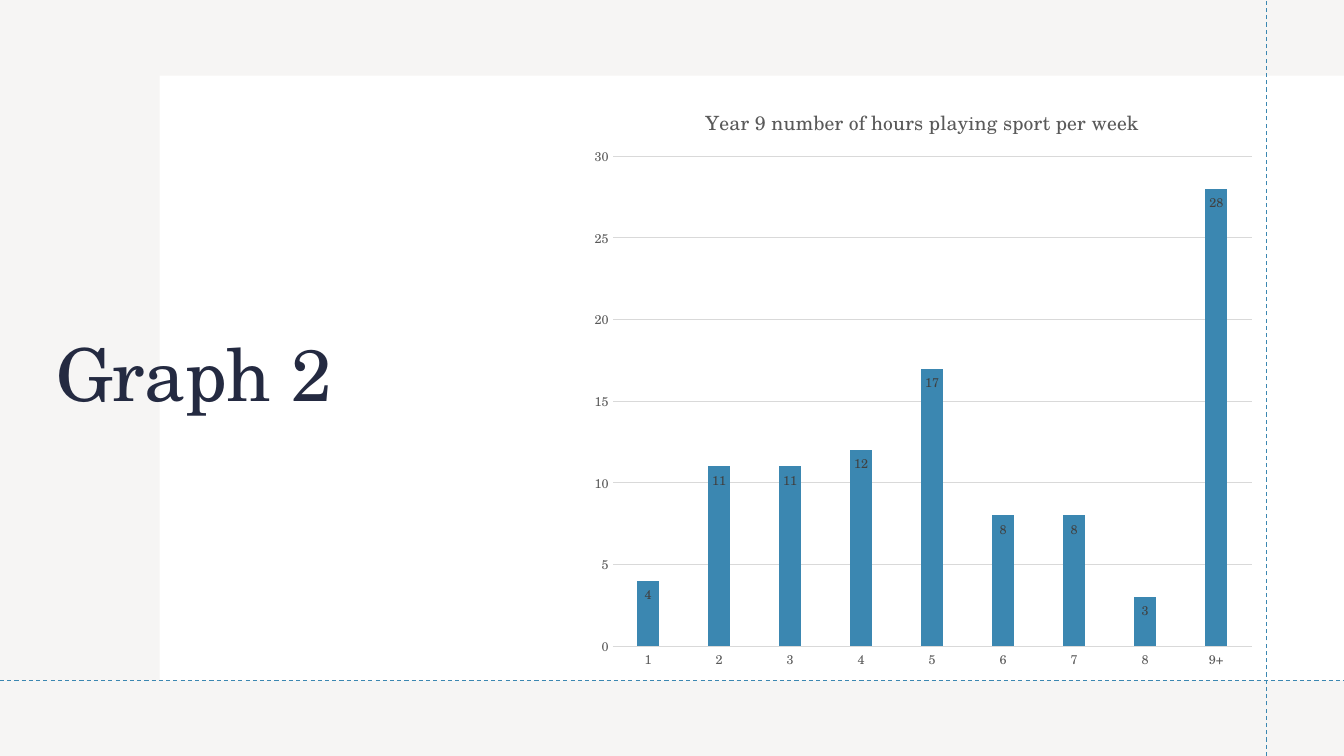
"""Build a slide with a column chart of weekly sport hours."""
from dataclasses import dataclass

from lxml import etree
from pptx import Presentation
from pptx.chart.data import CategoryChartData
from pptx.dml.color import RGBColor
from pptx.enum.chart import XL_CHART_TYPE, XL_LABEL_POSITION, XL_TICK_MARK
from pptx.enum.dml import MSO_LINE
from pptx.enum.shapes import MSO_CONNECTOR, MSO_SHAPE
from pptx.enum.text import MSO_ANCHOR, PP_ALIGN
from pptx.oxml import parse_xml
from pptx.oxml.ns import nsdecls, qn
from pptx.util import Pt

COLUMN = XL_CHART_TYPE.COLUMN_CLUSTERED
INSIDE_END = XL_LABEL_POSITION.INSIDE_END
NO_TICK = XL_TICK_MARK.NONE
DASH = MSO_LINE.DASH
STRAIGHT = MSO_CONNECTOR.STRAIGHT
RECT = MSO_SHAPE.RECTANGLE
MIDDLE = MSO_ANCHOR.MIDDLE
LEFT = PP_ALIGN.LEFT

FONT = "TeX Gyre Schola"
WIDTH, HEIGHT = 960, 540
COLORS = {
    "sand": "E8E4E2", "white": "FFFFFF", "navy": "242A41", "blue": "3B87B1",
    "grid": "D9D9D9", "axis": "595959", "label": "404040", "black": "000000",
}
HOURS = {"1": 4, "2": 11, "3": 11, "4": 12, "5": 17, "6": 8, "7": 8, "8": 3, "9+": 28}


@dataclass
class Panel:
    """A filled rectangle, with opacity in percent."""
    left: float
    top: float
    width: float
    height: float
    color: str
    opacity: int = 100


@dataclass
class Guide:
    """A dashed line between two points."""
    x1: float
    y1: float
    x2: float
    y2: float


PANELS = [
    Panel(0, 0, WIDTH, HEIGHT, "sand", 35),
    Panel(114, 54, 846, 432, "white"),
]
GUIDES = [Guide(905, HEIGHT, 905, 0), Guide(0, 486, WIDTH, 486)]


def rgb(name: str) -> RGBColor:
    """Return a named colour."""
    return RGBColor.from_string(COLORS[name])


def style_font(font, size: float, color: str) -> None:
    """Set the face, size and colour of a font."""
    font.name, font.size, font.bold = FONT, Pt(size), False
    font.color.rgb = rgb(color)


def add_panel(s, panel: Panel) -> None:
    """Draw a panel."""
    sp = s.shapes.add_shape(
        RECT, Pt(panel.left), Pt(panel.top), Pt(panel.width), Pt(panel.height))
    sp.shadow.inherit = False
    sp.fill.solid()
    sp.fill.fore_color.rgb = rgb(panel.color)
    sp.line.fill.background()
    if panel.opacity < 100:
        fill = sp.element.spPr.find(qn("a:solidFill"))
        etree.SubElement(fill[0], qn("a:alpha"), val=str(panel.opacity * 1000))


def add_guide(s, guide: Guide) -> None:
    """Draw a dashed guide line."""
    sp = s.shapes.add_connector(
        STRAIGHT, Pt(guide.x1), Pt(guide.y1), Pt(guide.x2), Pt(guide.y2))
    sp.line.color.rgb = rgb("blue")
    sp.line.width = Pt(0.75)
    sp.line.dash_style = DASH
    etree.SubElement(sp.element.spPr, qn("a:effectLst"))


def add_title(s, text: str) -> None:
    """Place the title above the panels and fill it."""
    sp = s.shapes.title
    sp.element.getparent().append(sp.element)
    sp.left, sp.top, sp.width, sp.height = Pt(33), Pt(74), Pt(352), Pt(392)
    tf = sp.text_frame
    tf.word_wrap = True
    tf.vertical_anchor = MIDDLE
    p = tf.paragraphs[0]
    p.alignment = LEFT
    p.line_spacing = 0.9
    r = p.add_run()
    r.text = text
    style_font(r.font, 52, "navy")


def make_layout(target: str, **fractions: float):
    """Return a manual chart layout with the given fractions."""
    layout = parse_xml(f"<c:layout {nsdecls('c')}><c:manualLayout/></c:layout>")
    values = {"xMode": "edge", "yMode": "edge", **fractions}
    if target:
        values = {"layoutTarget": target, **values}
    for name, value in values.items():
        etree.SubElement(layout[0], qn(f"c:{name}"), val=str(value))
    return layout


def set_layout(parent, index: int, layout) -> None:
    """Replace the layout of a chart part."""
    for old in parent.findall(qn("c:layout")):
        parent.remove(old)
    parent.insert(index, layout)


def add_hours_chart(s) -> None:
    """Draw the column chart."""
    data = CategoryChartData()
    data.categories = list(HOURS)
    data.add_series("Series 1", list(HOURS.values()))
    chart = s.shapes.add_chart(
        COLUMN, Pt(413), Pt(55.5), Pt(491), Pt(432), data).chart
    style_font(chart.font, 10, "black")
    chart.has_legend = False

    chart.has_title = True
    title = chart.chart_title
    r = title.text_frame.paragraphs[0].add_run()
    r.text = "Year 9 number of hours playing sport per week"
    style_font(r.font, 14, "axis")
    title.include_in_layout = False
    set_layout(title.format.line and title.text_frame and chart.element.find(
        f".//{qn('c:title')}"), 1, make_layout("", x=0.18, y=0.04))
    set_layout(chart.element.find(f".//{qn('c:plotArea')}"), 0,
               make_layout("inner", x=0.05, y=0.13, w=0.93, h=0.81))

    for axis in (chart.category_axis, chart.value_axis):
        axis.major_tick_mark = axis.minor_tick_mark = NO_TICK
        style_font(axis.tick_labels.font, 9, "axis")
    values = chart.value_axis
    values.minimum_scale, values.maximum_scale, values.major_unit = 0, 30, 5
    values.format.line.fill.background()
    for line in (chart.category_axis.format.line, values.major_gridlines.format.line):
        line.color.rgb = rgb("grid")
        line.width = Pt(0.75)

    plot = chart.plots[0]
    plot.gap_width, plot.overlap, plot.vary_by_categories = 219, -27, False
    series = plot.series[0]
    series.format.fill.solid()
    series.format.fill.fore_color.rgb = rgb("blue")
    labels = series.data_labels
    labels.show_value = True
    labels.position = INSIDE_END
    style_font(labels.font, 9, "label")


def main() -> None:
    """Build and save the slide."""
    prs = Presentation()
    prs.slide_width, prs.slide_height = Pt(WIDTH), Pt(HEIGHT)
    s = prs.slides.add_slide(prs.slide_layouts[5])
    for panel in PANELS:
        add_panel(s, panel)
    add_title(s, "Graph 2")
    for guide in GUIDES:
        add_guide(s, guide)
    add_hours_chart(s)
    prs.save("out.pptx")


if __name__ == "__main__":
    main()
